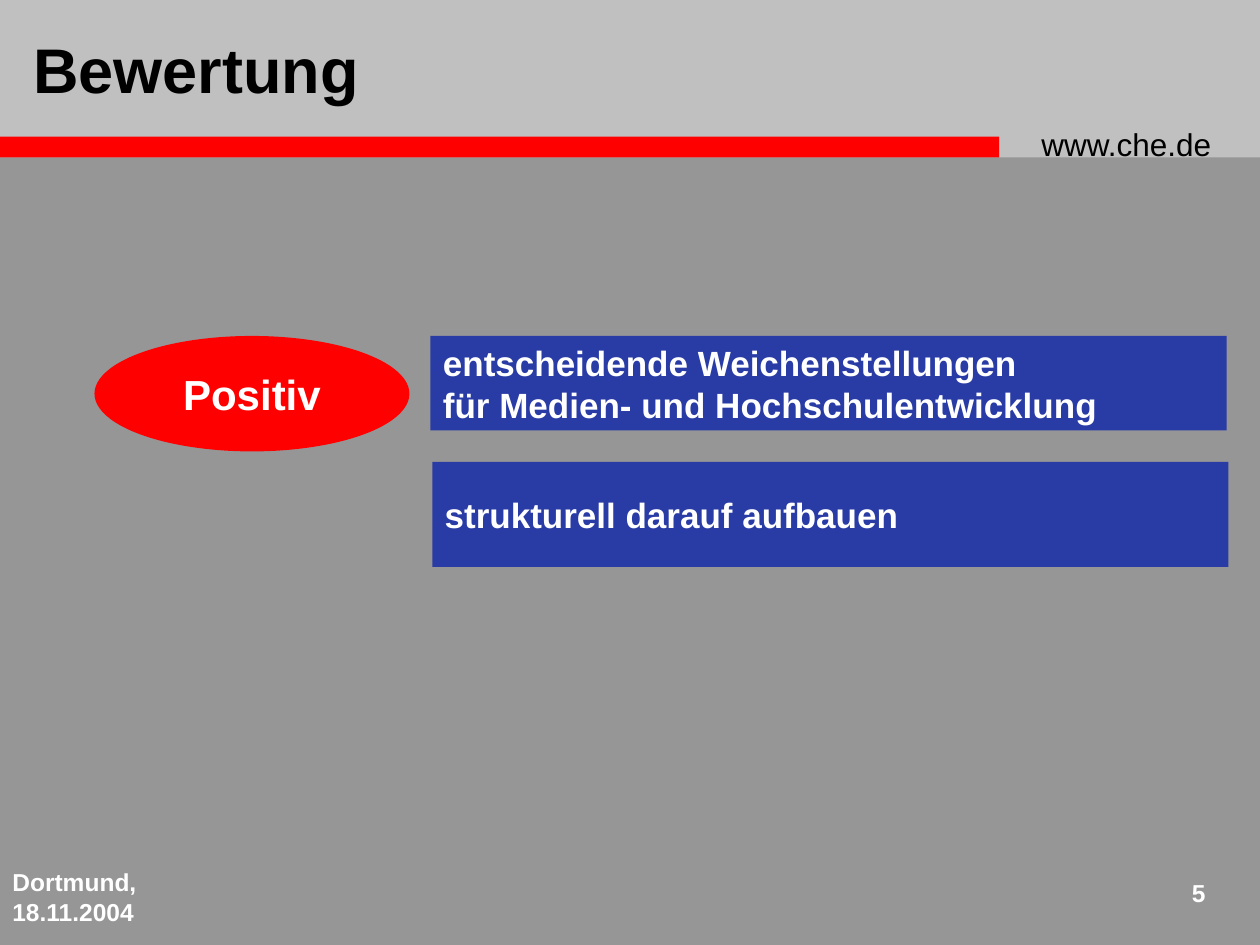
from pptx import Presentation
from pptx.dml.color import RGBColor
from pptx.enum.shapes import MSO_SHAPE
from pptx.enum.text import MSO_ANCHOR, PP_ALIGN
from pptx.util import Pt

RED, BLUE, WHITE, BLACK = "FF0000", "293BA5", "FFFFFF", "000000"


def paint(fill, color):
    """Give a fill one solid colour."""
    fill.solid()
    fill.fore_color.rgb = RGBColor.from_string(color)


def write(box, lines, size, color=WHITE, bold=True, align=PP_ALIGN.LEFT,
          anchor=MSO_ANCHOR.TOP, wrap=True):
    """Write one paragraph for each line into a box."""
    frame = box.text_frame
    frame.word_wrap = wrap
    frame.vertical_anchor = anchor
    for index, line in enumerate(lines):
        para = frame.add_paragraph() if index else frame.paragraphs[0]
        para.alignment = align
        span = para.add_run()
        span.text = line
        span.font.name = "Arial"
        span.font.size = Pt(size)
        span.font.bold = bold
        span.font.color.rgb = RGBColor.from_string(color)


def add_block(page, kind, left, top, width, height, color):
    """Add a plain filled shape."""
    block = page.shapes.add_shape(kind, Pt(left), Pt(top), Pt(width), Pt(height))
    block.shadow.inherit = False
    paint(block.fill, color)
    block.line.fill.background()
    return block


def add_label(page, left, top, width, height, text, size, **style):
    """Add a text box holding one line."""
    box = page.shapes.add_textbox(Pt(left), Pt(top), Pt(width), Pt(height))
    write(box, [text], size, **style)


def add_header(page, left, top, width, height):
    """Place the title band with its red bar and web address."""
    add_block(page, MSO_SHAPE.RECTANGLE, left, top, width, height, "C0C0C0")
    add_block(page, MSO_SHAPE.RECTANGLE, left, top + height - 12, 571, 12, RED)
    add_label(page, left + width - 132, top + height - 22, 126, 29, "www.che.de", 18,
              color=BLACK, bold=False)
    add_label(page, left + 12, top + 12, 409, 54, "Bewertung", 36, color=BLACK,
              anchor=MSO_ANCHOR.MIDDLE)


def add_rating(page, left, top, width):
    """Place the verdict oval and the statements to its right."""
    statements = [
        (192, 0, 54, ["entscheidende Weichenstellungen",
                      "für Medien- und Hochschulentwicklung"]),
        (193, 72, 60, ["strukturell darauf aufbauen"]),
    ]
    oval = add_block(page, MSO_SHAPE.OVAL, left, top, 180, 66, RED)
    write(oval, ["Positiv"], 24, align=PP_ALIGN.CENTER, anchor=MSO_ANCHOR.MIDDLE, wrap=False)
    for indent, drop, height, lines in statements:
        bar = add_block(page, MSO_SHAPE.RECTANGLE, left + indent, top + drop,
                        width - 193, height, BLUE)
        write(bar, lines, 20, anchor=MSO_ANCHOR.MIDDLE, wrap=False)


def add_footer(page, left, top, width):
    """Place the place and date on the left and the page number on the right."""
    add_label(page, left, top, 150, 36, "Dortmund, 18.11.2004", 14)
    add_label(page, left + width - 66, top + 6, 42, 30, "5", 14, align=PP_ALIGN.RIGHT)


def main():
    """Build the slide and save it."""
    deck = Presentation()
    deck.slide_width, deck.slide_height = Pt(720), Pt(540)
    page = deck.slides.add_slide(deck.slide_layouts[6])
    paint(page.background.fill, "969696")
    add_header(page, 0, 0, 720, 90)
    add_footer(page, 0, 492, 720)
    add_rating(page, 54, 192, 648)
    deck.save("out.pptx")


if __name__ == "__main__":
    main()
